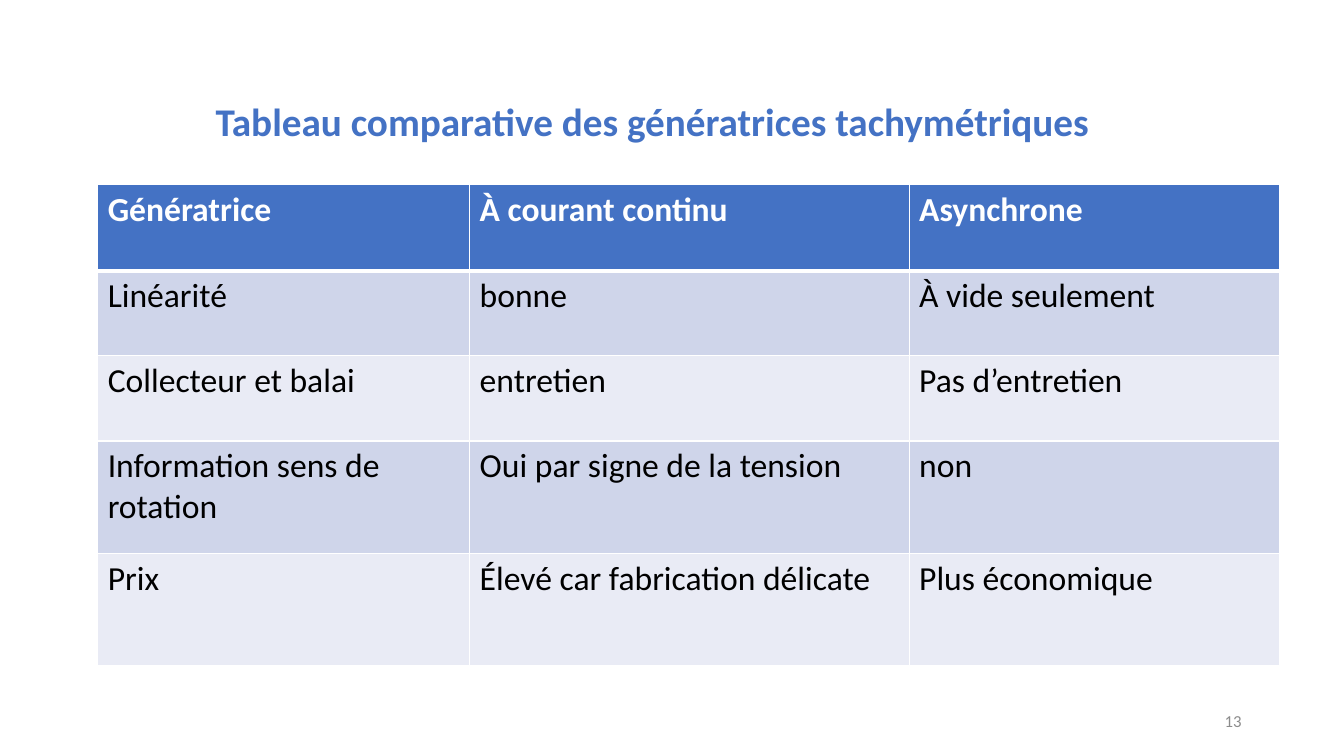
from dataclasses import dataclass

from lxml.etree import SubElement
from pptx import Presentation
from pptx.dml.color import RGBColor
from pptx.enum.text import MSO_ANCHOR, MSO_AUTO_SIZE, PP_ALIGN
from pptx.oxml.ns import qn
from pptx.slide import Slide
from pptx.table import _Cell
from pptx.text.text import TextFrame
from pptx.util import Pt

BLUE = RGBColor(0x44, 0x72, 0xC4)
PALE_BLUE = RGBColor(0xCF, 0xD5, 0xEA)
PALER_BLUE = RGBColor(0xE9, 0xEB, 0xF5)
WHITE = RGBColor(0xFF, 0xFF, 0xFF)
BLACK = RGBColor(0, 0, 0)
GREY = RGBColor(0x8C, 0x8C, 0x8C)

COLUMN_WIDTHS = (265.7, 313.9, 265)


@dataclass(frozen=True)
class TextStyle:
    size: float
    color: RGBColor
    bold: bool = False
    align: PP_ALIGN = PP_ALIGN.LEFT
    line_spacing: float = 1.0


@dataclass(frozen=True)
class Criterion:
    cells: tuple[str, str, str]
    height: float


TITLE_STYLE = TextStyle(28, BLUE, True, PP_ALIGN.CENTER, 0.9)
HEADER_STYLE = TextStyle(24, WHITE, True)
BODY_STYLE = TextStyle(24, BLACK)
NUMBER_STYLE = TextStyle(12, GREY, align=PP_ALIGN.RIGHT)

CRITERIA = (
    Criterion(("Génératrice", "À courant continu", "Asynchrone"), 61.6),
    Criterion(("Linéarité", "bonne", "À vide seulement"), 60.8),
    Criterion(("Collecteur et balai", "entretien", "Pas d’entretien"), 60.8),
    Criterion(("Information sens de rotation", "Oui par signe de la tension", "non"), 80.4),
    Criterion(("Prix", "Élevé car fabrication délicate", "Plus économique"), 80.4),
)


def write(frame: TextFrame, text: str, style: TextStyle) -> None:
    frame.text = text
    paragraph = frame.paragraphs[0]
    paragraph.alignment = style.align
    paragraph.line_spacing = style.line_spacing
    font = paragraph.runs[0].font
    for name, value in {"name": "Calibri", "size": Pt(style.size), "bold": style.bold}.items():
        setattr(font, name, value)
    font.color.rgb = style.color


def format_frame(frame: TextFrame, anchor: MSO_ANCHOR) -> None:
    settings = {
        "word_wrap": True,
        "auto_size": MSO_AUTO_SIZE.NONE,
        "vertical_anchor": anchor,
    }
    for name, value in settings.items():
        setattr(frame, name, value)


def add_borders(cell: _Cell, widths: dict[str, float]) -> None:
    """Draw white borders; call before filling, as the schema puts lines first."""
    properties = cell._tc.get_or_add_tcPr()
    for side, width in widths.items():
        line = SubElement(properties, qn(f"a:ln{side}"), w=str(Pt(width)))
        fill = SubElement(line, qn("a:solidFill"))
        SubElement(fill, qn("a:srgbClr"), val=str(WHITE))


def add_title(slide: Slide) -> None:
    title = slide.shapes.title
    box = {"left": 36.7, "top": 0.7, "width": 858.2, "height": 106.6}
    for name, value in box.items():
        setattr(title, name, Pt(value))
    format_frame(title.text_frame, MSO_ANCHOR.BOTTOM)
    write(title.text_frame, "Tableau comparative des génératrices tachymétriques", TITLE_STYLE)


def add_comparison(slide: Slide) -> None:
    height = sum(criterion.height for criterion in CRITERIA)
    comparison = slide.shapes.add_table(
        len(CRITERIA), len(COLUMN_WIDTHS),
        Pt(69.8), Pt(131.8), Pt(sum(COLUMN_WIDTHS)), Pt(height),
    ).table
    for column, width in zip(comparison.columns, COLUMN_WIDTHS):
        column.width = Pt(width)
    for index, (row, criterion) in enumerate(zip(comparison.rows, CRITERIA)):
        row.height = Pt(criterion.height)
        is_header = index == 0
        band = BLUE if is_header else PALE_BLUE if index % 2 else PALER_BLUE
        borders = {"L": 1, "R": 1, "T": 3 if index == 1 else 1, "B": 3 if is_header else 1}
        for cell, text in zip(row.cells, criterion.cells):
            write(cell.text_frame, text, HEADER_STYLE if is_header else BODY_STYLE)
            add_borders(cell, borders)
            cell.fill.solid()
            cell.fill.fore_color.rgb = band


def add_page_number(slide: Slide) -> None:
    frame = slide.shapes.add_textbox(Pt(678), Pt(500.5), Pt(216), Pt(28.8)).text_frame
    format_frame(frame, MSO_ANCHOR.MIDDLE)
    write(frame, "13", NUMBER_STYLE)


def main() -> None:
    presentation = Presentation()
    presentation.slide_width = Pt(960)
    presentation.slide_height = Pt(540)
    slide = presentation.slides.add_slide(presentation.slide_layouts.get_by_name("Title Only"))
    add_page_number(slide)
    add_title(slide)
    add_comparison(slide)
    presentation.save("out.pptx")


if __name__ == "__main__":
    main()
